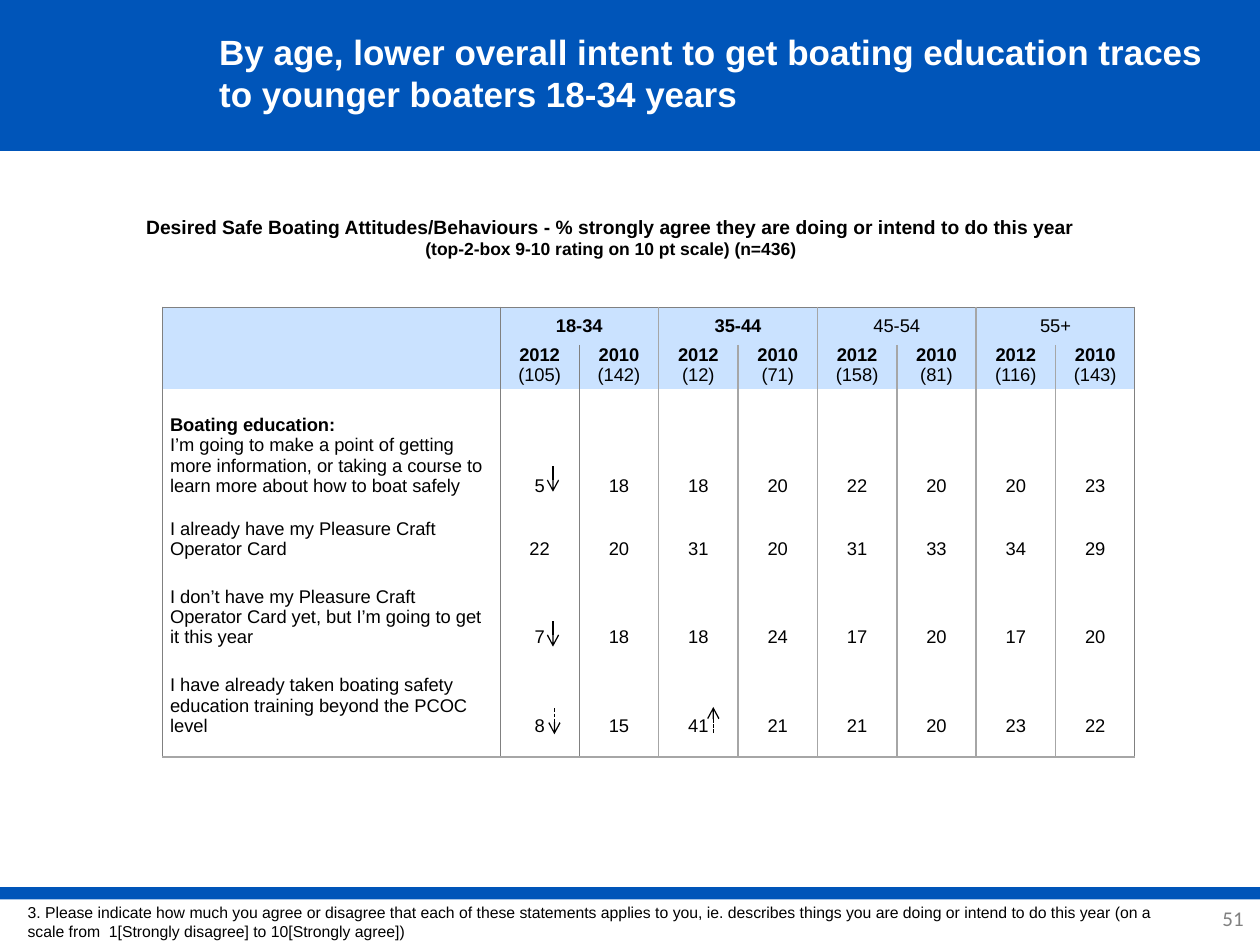
import pptx
import pptx.util
import pptx.dml.color
import pptx.enum.dml
import pptx.enum.shapes
import pptx.enum.text
import lxml.etree

Pt = pptx.util.Pt
RGB = pptx.dml.color.RGBColor.from_string
ALIGN = pptx.enum.text.PP_ALIGN
ANCHOR = pptx.enum.text.MSO_ANCHOR
NS = "http://schemas.openxmlformats.org/drawingml/2006/main"
THEME = {
    "font": "Arial", "number_font": "Calibri",
    "bar": "0055B9", "header": "CAE2FF", "text": "000000", "on_bar": "FFFFFF",
    "frame": "808080", "divider": "A6A6A6",
    "title": 20, "heading": 11, "subheading": 10, "table": 10.5, "note": 9, "number": 12,
}


def write(frame, text, size="table", font="font", color="text", bold=False,
          align=ALIGN.LEFT, anchor=None):
    """Append text to the frame's first paragraph; a newline is a line break."""
    frame.word_wrap = True
    if anchor is not None:
        frame.vertical_anchor = anchor
    paragraph = frame.paragraphs[0]
    paragraph.alignment = align
    for i, line in enumerate(text.split("\n")):
        if i:
            paragraph.add_line_break()
        if line:
            run = paragraph.add_run()
            run.text = line
            run.font.name = THEME[font]
            run.font.size = Pt(THEME[size])
            run.font.bold = bold
            run.font.color.rgb = RGB(THEME[color])
    # Line breaks follow the paragraph's own size
    for line_break in paragraph._p.findall(f"{{{NS}}}br"):
        if not len(line_break):
            lxml.etree.SubElement(line_break, f"{{{NS}}}rPr", sz=str(int(THEME[size] * 100)))


def add_borders(cell, borders):
    """Draw borders, given as side: (colour, width), ahead of the cell's fill."""
    properties = cell._tc.get_or_add_tcPr()
    sides = [side for side in "LRTB" if side in borders]
    for i, side in enumerate(sides):
        color, width = borders[side]
        line = lxml.etree.Element(f"{{{NS}}}ln{side}", w=str(Pt(width)))
        fill = lxml.etree.SubElement(line, f"{{{NS}}}solidFill")
        lxml.etree.SubElement(fill, f"{{{NS}}}srgbClr", val=THEME[color])
        properties.insert(i, line)


deck = pptx.Presentation()
deck.slide_width, deck.slide_height = Pt(720), Pt(540)
slide = deck.slides.add_slide(deck.slide_layouts[5])
shapes = slide.shapes

# Bars at the top and bottom, behind the title
for i, (top, height) in enumerate([(-2, 88.3), (506.9, 7)]):
    bar = shapes.add_shape(pptx.enum.shapes.MSO_SHAPE.RECTANGLE, 0, Pt(top), Pt(720), Pt(height))
    bar.shadow.inherit = False
    bar.fill.solid()
    bar.fill.fore_color.rgb = RGB(THEME["bar"])
    bar.line.fill.background()
    shapes.element.insert(2 + i, bar.element)

title = shapes.title
title.left, title.top, title.width, title.height = Pt(118), Pt(0), Pt(582.5), Pt(83)
title.text_frame.auto_size = pptx.enum.text.MSO_AUTO_SIZE.NONE
write(title.text_frame,
      "By age, lower overall intent to get boating education traces to younger boaters 18-34 years",
      size="title", color="on_bar", bold=True, anchor=ANCHOR.MIDDLE)

page_number = shapes.add_textbox(Pt(674), Pt(510.5), Pt(45.36), Pt(28.8)).text_frame
page_number.margin_left = page_number.margin_top = page_number.margin_bottom = Pt(3)
page_number.margin_right = Pt(8.64)
write(page_number, "51", size="number", font="number_font", color="frame",
      align=ALIGN.RIGHT, anchor=ANCHOR.MIDDLE)

question = shapes.add_textbox(Pt(8.64), Pt(513.5), Pt(656.6), Pt(26.6)).text_frame
write(question,
      "3. Please indicate how much you agree or disagree that each of these statements applies to "
      "you, ie. describes things you are doing or intend to do this year (on a scale from  "
      "1[Strongly disagree] to 10[Strongly agree])", size="note", anchor=ANCHOR.MIDDLE)

heading = shapes.add_textbox(Pt(50.4), Pt(119.5), Pt(597), Pt(37.4)).text_frame
write(heading, "Desired Safe Boating Attitudes/Behaviours - % strongly agree they are doing or "
      "intend to do this year\n", size="heading", bold=True, align=ALIGN.CENTER)
write(heading, "(top-2-box 9-10 rating on 10 pt scale) (n=436)", size="subheading", bold=True,
      align=ALIGN.CENTER)

# Table of agreement by age group and year
age_groups = [("18-34", True), ("35-44", True), ("45-54", False), ("55+", False)]
sample_sizes = [105, 142, 12, 71, 158, 81, 116, 143]
statements = [
    ("Boating education:\n", "I’m going to make a point of getting more information, or taking a "
     "course to learn more about how to boat safely", [5, 18, 18, 20, 22, 20, 20, 23]),
    ("", "I already have my Pleasure Craft Operator Card", [22, 20, 31, 20, 31, 33, 34, 29]),
    ("", "I don’t have my Pleasure Craft Operator Card yet, but I’m going to get it this year",
     [7, 18, 18, 24, 17, 20, 17, 20]),
    ("", "I have already taken boating safety education training beyond the PCOC level",
     [8, 15, 41, 21, 21, 20, 23, 22]),
]
row_heights = [20.9, 23.6, 61.4, 36, 50.4, 62.6]
column_widths = [192.8] + [45.36] * 8
last_row, last_column = len(row_heights) - 1, len(column_widths) - 1

table_frame = shapes.add_table(len(row_heights), len(column_widths), Pt(92.9), Pt(175.5),
                               Pt(sum(column_widths)), Pt(sum(row_heights)))
table = table_frame.table
table.horz_banding = False
table.first_row = False
# The style without fills or grid lines
next(table_frame.element.iter(f"{{{NS}}}tableStyleId")).text = "{2D5ABB26-0587-4C30-8999-92F81FD0307C}"
for row, height in zip(table.rows, row_heights):
    row.height = Pt(height)
for column, width in zip(table.columns, column_widths):
    column.width = Pt(width)

thin, thick = ("frame", 0.5), ("divider", 1)
for r in range(last_row + 1):
    for c in range(last_column + 1):
        cell = table.cell(r, c)
        cell.margin_left = cell.margin_right = Pt(0 if c else 4.32)
        cell.margin_top = 0
        cell.margin_bottom = Pt(12 if r == last_row else 0)
        if r < 2:
            cell.fill.solid()
            cell.fill.fore_color.rgb = RGB(THEME["header"])
        else:
            cell.fill.background()
        borders = {}
        if c < 2:
            borders["L"] = thin
        elif c % 2:
            borders["L"] = thick
        if c in (0, last_column):
            borders["R"] = thin
        elif c % 2 == 0 or r == 0:
            borders["R"] = thin if c == last_column - 1 else thick
        if r == 0:
            borders["T"] = thin
        if r == last_row:
            borders["B"] = thick
        add_borders(cell, borders)

for i, (age, bold) in enumerate(age_groups):
    group = table.cell(0, 1 + 2 * i)
    group.merge(table.cell(0, 2 + 2 * i))
    group.vertical_anchor = ANCHOR.MIDDLE
    write(group.text_frame, age, bold=bold, align=ALIGN.CENTER)
for c, sample_size in enumerate(sample_sizes, 1):
    year = table.cell(1, c).text_frame
    write(year, "2012\n" if c % 2 else "2010\n", bold=True, align=ALIGN.CENTER)
    write(year, f"({sample_size})", align=ALIGN.CENTER)
for r, (topic, statement, percentages) in enumerate(statements, 2):
    label = table.cell(r, 0)
    label.vertical_anchor = ANCHOR.BOTTOM
    if topic:
        write(label.text_frame, topic, bold=True)
    write(label.text_frame, statement)
    for c, percentage in enumerate(percentages, 1):
        value = table.cell(r, c)
        value.vertical_anchor = ANCHOR.BOTTOM
        write(value.text_frame, str(percentage), align=ALIGN.CENTER)

# Arrows for changes since 2010: x, start, end, dashed
for x, start, end, dashed in [(316, 355, 369.5, False), (316.8, 404.8, 419.6, True),
                              (316, 266.4, 281, False), (407.6, 419, 404, True)]:
    change = shapes.add_connector(pptx.enum.shapes.MSO_CONNECTOR.STRAIGHT,
                                  Pt(x), Pt(start), Pt(x), Pt(end))
    change.line.color.rgb = RGB(THEME["text"])
    change.line.width = Pt(0.75)
    if dashed:
        change.line.dash_style = pptx.enum.dml.MSO_LINE.SQUARE_DOT
    lxml.etree.SubElement(change.line._get_or_add_ln(), f"{{{NS}}}tailEnd", type="arrow")
    lxml.etree.SubElement(change.element.spPr, f"{{{NS}}}effectLst")

deck.save("out.pptx")
